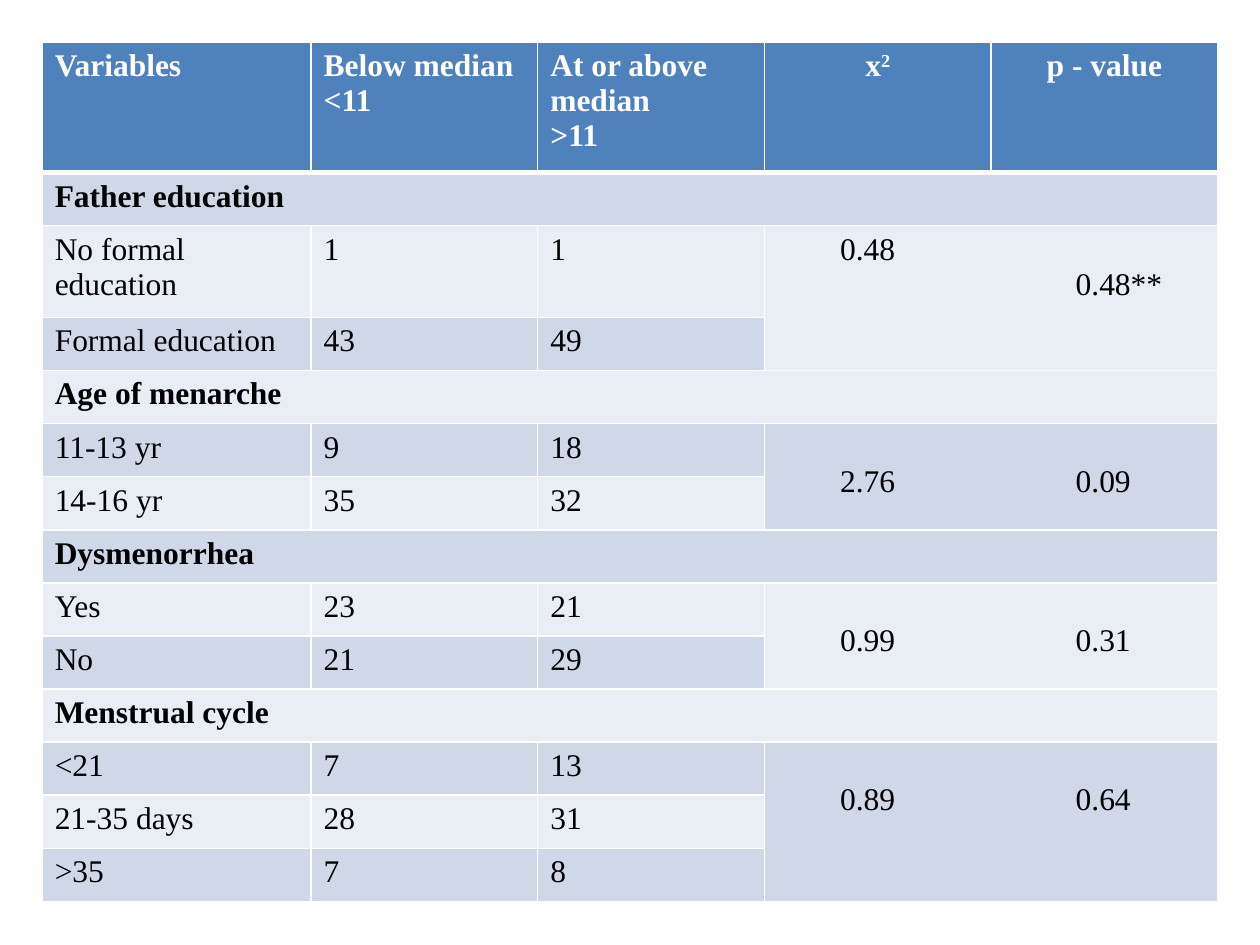
from dataclasses import dataclass

from lxml.etree import SubElement
from pptx import Presentation
from pptx.dml.color import RGBColor
from pptx.enum.text import PP_ALIGN
from pptx.oxml.ns import qn
from pptx.table import Table, _Cell
from pptx.util import Cm, Pt

HEADER_FILL, BANDS = "4F81BD", ("E9EDF4", "D0D8E8")
WHITE, BLACK = "FFFFFF", "000000"
HEADINGS = ["Variables", "Below median <11", "At or above median\n>11", "x", "p - value"]
COLUMN_WIDTHS = [5.42] + [4.57] * 4
HEADER_HEIGHT, TALL_HEIGHT, ROW_HEIGHT = 2.63, 1.85, 1.07
STATISTIC_TABS = (1.27, 6.02)
SECOND_LINE_MARGIN = 0.82


@dataclass
class Group:
    title: str
    rows: list[tuple[str, str, str]]
    statistics: str
    top_margin: float = SECOND_LINE_MARGIN


GROUPS = [
    Group("Father education",
          [("No formal\neducation", "1", "1"), ("Formal education", "43", "49")],
          "\t0.48\n\t\t0.48**", 0.13),
    Group("Age of menarche",
          [("11-13 yr", "9", "18"), ("14-16 yr", "35", "32")], "\t2.76\t0.09"),
    Group("Dysmenorrhea",
          [("Yes", "23", "21"), ("No", "21", "29")], "\t0.99\t0.31"),
    Group("Menstrual cycle",
          [("<21", "7", "13"), ("21-35 days", "28", "31"), (">35", "7", "8")],
          "\t0.89\t0.64"),
]


def color(value: str) -> RGBColor:
    return RGBColor.from_string(value)


def write(cell: _Cell, text: str, bold: bool = False, ink: str = BLACK,
          align: PP_ALIGN = PP_ALIGN.LEFT, superscript: str = "") -> None:
    font_format = {"name": "Times New Roman", "size": Pt(18), "bold": bold}
    frame = cell.text_frame
    for index, line in enumerate(text.split("\n")):
        paragraph = frame.add_paragraph() if index else frame.paragraphs[0]
        paragraph.alignment = align
        for part in filter(None, (line, superscript)):
            run = paragraph.add_run()
            run.text = part
            for name, value in font_format.items():
                setattr(run.font, name, value)
            run.font.color.rgb = color(ink)
        if superscript:
            run.font._element.set("baseline", "30000")


def set_tabs(cell: _Cell) -> None:
    for paragraph in cell.text_frame.paragraphs:
        tab_list = SubElement(paragraph._p.get_or_add_pPr(), qn("a:tabLst"))
        for position in STATISTIC_TABS:
            SubElement(tab_list, qn("a:tab"), pos=str(Cm(position)), algn="l")


def set_borders(cell: _Cell, bottom: float) -> None:
    properties = cell._tc.get_or_add_tcPr()
    widths = {"a:lnL": 1, "a:lnR": 1, "a:lnT": 1, "a:lnB": bottom}
    for index, (tag, width) in enumerate(widths.items()):
        line = properties.makeelement(qn(tag), {"w": str(Pt(width))})
        fill = SubElement(line, qn("a:solidFill"))
        SubElement(fill, qn("a:srgbClr"), val=WHITE)
        properties.insert(index, line)


def paint(table: Table) -> None:
    for row_index, row in enumerate(table.rows):
        for cell in row.cells:
            cell.fill.solid()
            cell.fill.fore_color.rgb = color(BANDS[row_index % 2] if row_index else HEADER_FILL)
            if not cell.is_spanned:
                set_borders(cell, 1 if row_index else 3)


def add_group(table: Table, top: int, group: Group) -> int:
    """Write one group from row top and return the row after it."""
    table.cell(top, 0).merge(table.cell(top, 4))
    write(table.cell(top, 0), group.title, bold=True)
    for row_index, values in enumerate(group.rows, top + 1):
        for column, value in enumerate(values):
            write(table.cell(row_index, column), value)
    last = top + len(group.rows)
    statistics = table.cell(top + 1, 3)
    statistics.merge(table.cell(last, 4))
    write(statistics, group.statistics)
    statistics.margin_top = Cm(group.top_margin)
    set_tabs(statistics)
    return last + 1


def main() -> None:
    presentation = Presentation()
    presentation.slide_width, presentation.slide_height = Cm(25.4), Cm(19.05)
    slide = presentation.slides.add_slide(presentation.slide_layouts[6])

    # Table grid
    row_count = 1 + sum(1 + len(group.rows) for group in GROUPS)
    heights = [HEADER_HEIGHT, ROW_HEIGHT, TALL_HEIGHT] + [ROW_HEIGHT] * (row_count - 3)
    table = slide.shapes.add_table(
        row_count, len(HEADINGS), Cm(0.85), Cm(0.85),
        Cm(sum(COLUMN_WIDTHS)), Cm(sum(heights))).table
    for column, width in zip(table.columns, COLUMN_WIDTHS):
        column.width = Cm(width)
    for row, height in zip(table.rows, heights):
        row.height = Cm(height)

    # Header
    for index, heading in enumerate(HEADINGS):
        write(table.cell(0, index), heading, bold=True, ink=WHITE,
              align=PP_ALIGN.CENTER if index > 2 else PP_ALIGN.LEFT,
              superscript="2" if heading == "x" else "")

    # Variable groups
    next_row = 1
    for group in GROUPS:
        next_row = add_group(table, next_row, group)
    paint(table)

    presentation.save("out.pptx")


if __name__ == "__main__":
    main()
